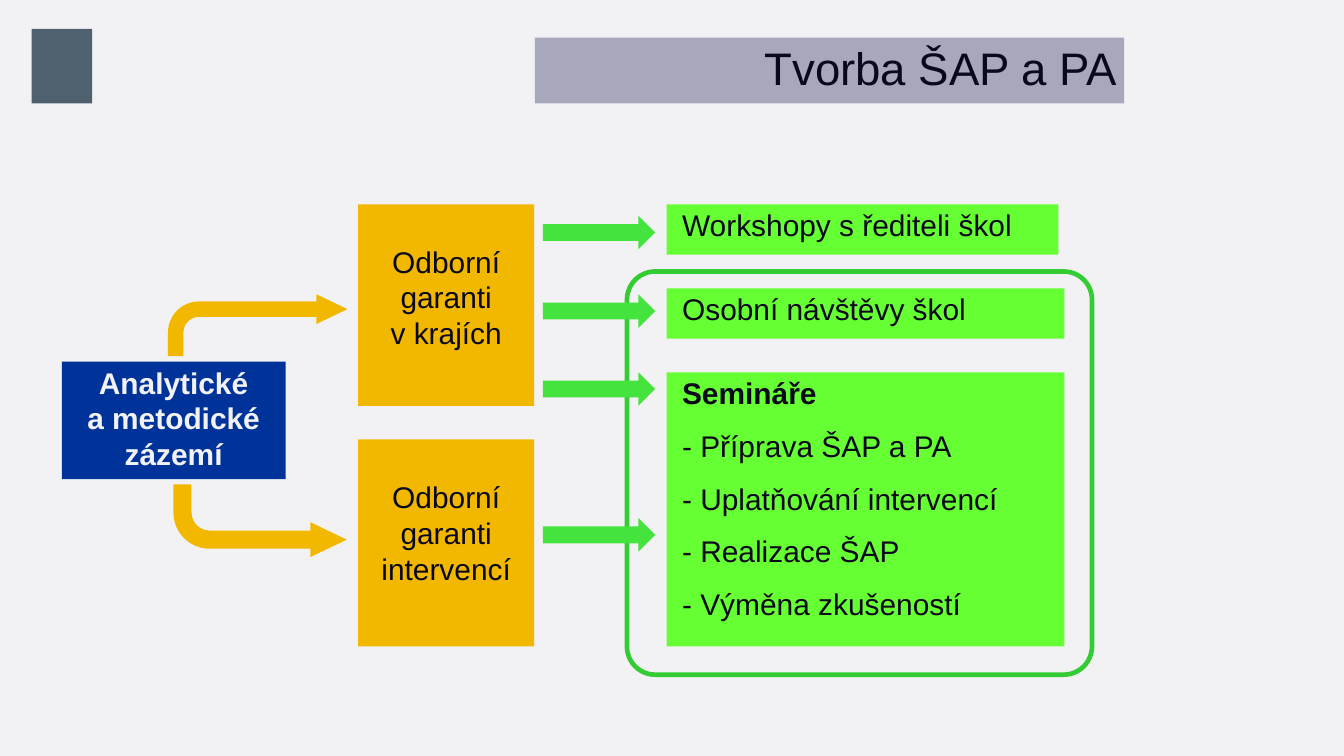
from lxml.etree import SubElement
from pptx import Presentation
from pptx.dml.color import RGBColor
from pptx.enum.shapes import MSO_SHAPE
from pptx.enum.text import MSO_ANCHOR, MSO_AUTO_SIZE, PP_ALIGN
from pptx.oxml.ns import qn
from pptx.util import Inches, Pt

COLORS = {
    "background": "F2F2F5",
    "title": "A8A8BC",
    "text": "0A091B",
    "base": "003399",
    "guarantor": "F2B800",
    "activity": "66FF33",
    "arrow": "45E33D",
    "frame": "33CC33",
    "logo": "4F606E",
}

GUARANTORS = [(3.04, 3, "v krajích"), (6.54, 3.08, "intervencí")]
ACTIVITIES = [(3.04, 5.83, "Workshopy s řediteli škol"), (4.29, 5.92, "Osobní návštěvy škol")]
SEMINARS = [
    "Semináře",
    "- Příprava ŠAP a PA",
    "- Uplatňování intervencí",
    "- Realizace ŠAP",
    "- Výměna zkušeností",
]
ARROW_TOPS = [3.21, 4.38, 5.54, 7.71]
BENT_ARROWS = [((2.5, 4.38, 2.67, 0.92), False), ((2.58, 7.21, 2.58, 1.08), True)]


def color(name):
    return RGBColor.from_string(COLORS[name])


def apply(target, values):
    for name, value in values.items():
        setattr(target, name, value)


def place(shape, box):
    apply(shape, dict(zip(("left", "top", "width", "height"), map(Inches, box))))


def paint(shape, fill):
    shape.fill.solid()
    shape.fill.fore_color.rgb = color(fill)
    shape.line.fill.background()


def add_block(slide, kind, box, fill, adjustments=()):
    shape = slide.shapes.add_shape(kind, *map(Inches, box))
    shape.shadow.inherit = False
    paint(shape, fill)
    for index, value in enumerate(adjustments):
        shape.adjustments[index] = value
    return shape


def write(shape, lines, align=PP_ALIGN.LEFT, margins=(0, 0.04, 0, 0.01),
          anchor=MSO_ANCHOR.TOP, size=32, bold=False, text_color="text",
          line_spacing=1.0, gap=0):
    frame = shape.text_frame
    sides = ("margin_left", "margin_top", "margin_right", "margin_bottom")
    apply(frame, dict(zip(sides, map(Inches, margins))))
    apply(frame, {"word_wrap": True, "auto_size": MSO_AUTO_SIZE.NONE, "vertical_anchor": anchor})
    for index, line in enumerate(lines):
        paragraph = frame.add_paragraph() if index else frame.paragraphs[0]
        apply(paragraph, {
            "alignment": align,
            "line_spacing": line_spacing,
            "space_before": Pt(gap if index else 0),
            "space_after": Pt(0),
        })
        run = paragraph.add_run()
        run.text = line
        apply(run.font, {"name": "Arial", "size": Pt(size), "bold": bold})
        run.font.color.rgb = color(text_color)


def fill_title(slide):
    title = slide.shapes.title
    place(title, (7.96, 0.56, 8.77, 0.98))
    paint(title, "title")
    write(title, ["Tvorba ŠAP a PA"], align=PP_ALIGN.RIGHT, margins=(0.1, 0.05, 0.1, 0.05),
          anchor=MSO_ANCHOR.MIDDLE, size=48.8, line_spacing=0.9)


def fill_seminars(slide):
    body = slide.placeholders[1]
    place(body, (9.92, 5.54, 5.92, 4.08))
    paint(body, "activity")
    write(body, SEMINARS, margins=(0.23, 0.04, 0, 0.01), gap=18)
    for paragraph in body.text_frame.paragraphs:
        properties = paragraph._p.get_or_add_pPr()
        properties.set("marL", "0")
        properties.set("indent", "0")
        SubElement(properties, qn("a:buNone"))
    body.text_frame.paragraphs[0].runs[0].font.bold = True


def add_frame(slide):
    frame = add_block(slide, MSO_SHAPE.ROUNDED_RECTANGLE, (9.33, 4.04, 6.92, 6), "frame", (0.07,))
    frame.fill.background()
    frame.line.color.rgb = color("frame")
    frame.line.width = Pt(5)


def add_bent_arrow(slide, box, flipped):
    arrow = add_block(slide, MSO_SHAPE.BENT_ARROW, box, "guarantor", (0.25, 0.24, 0.5, 0.5))
    if flipped:
        arrow._element.spPr.find(qn("a:xfrm")).set("flipV", "1")


def main():
    presentation = Presentation()
    apply(presentation, {"slide_width": Inches(20), "slide_height": Inches(11.25)})
    slide = presentation.slides.add_slide(presentation.slide_layouts[1])
    slide.background.fill.solid()
    slide.background.fill.fore_color.rgb = color("background")

    add_block(slide, MSO_SHAPE.RECTANGLE, (0.47, 0.43, 0.9, 1.11), "logo")
    fill_title(slide)
    fill_seminars(slide)
    add_frame(slide)
    for top, height, area in GUARANTORS:
        box = add_block(slide, MSO_SHAPE.RECTANGLE, (5.33, top, 2.62, height), "guarantor")
        write(box, ["Odborní garanti", area], align=PP_ALIGN.CENTER, margins=(0, 0.58, 0, 0.01))
    for top, width, activity in ACTIVITIES:
        box = add_block(slide, MSO_SHAPE.RECTANGLE, (9.92, top, width, 0.75), "activity")
        write(box, [activity], margins=(0.23, 0.04, 0, 0.01))
    for top in ARROW_TOPS:
        add_block(slide, MSO_SHAPE.RIGHT_ARROW, (8.08, top, 1.67, 0.5), "arrow")
    for box, flipped in BENT_ARROWS:
        add_bent_arrow(slide, box, flipped)
    base = add_block(slide, MSO_SHAPE.RECTANGLE, (0.92, 5.38, 3.33, 1.75), "base")
    write(base, ["Analytické", "a metodické zázemí"], align=PP_ALIGN.CENTER, bold=True,
          text_color="background")

    presentation.save("out.pptx")


if __name__ == "__main__":
    main()
